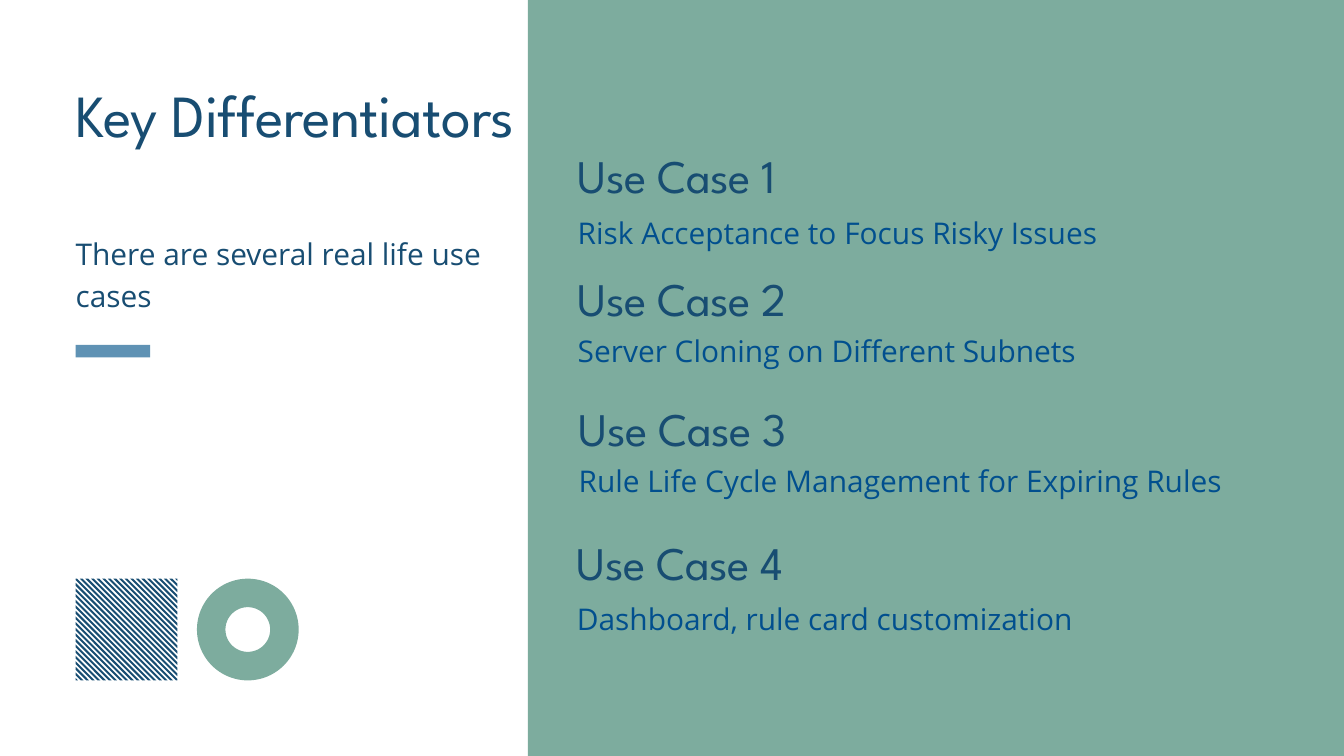
from pptx import Presentation
from pptx.dml.color import RGBColor
from pptx.enum.shapes import MSO_SHAPE as Shape
from pptx.enum.text import MSO_ANCHOR as Anchor, MSO_AUTO_SIZE as AutoSize, PP_ALIGN as Align
from pptx.oxml.ns import qn
from pptx.util import Pt

NAVY = RGBColor(0x18, 0x4D, 0x72)
BLUE = RGBColor(0x01, 0x4F, 0x8E)
STEEL = RGBColor(0x5F, 0x92, 0xB4)
SAGE = RGBColor(0x7D, 0xAC, 0x9E)

HEADING_FONT = "League Spartan"
BODY_FONT = "Open Sans"

MARGIN = 81
MOTIF_TOP = 620
MOTIF_SIZE = 109
STRIPE_PITCH = 6
STRIPE_WIDTH = 3


def write_text(box, text, font, size, color, line_height, tracking=0):
    frame = box.text_frame
    frame.text = text
    frame.word_wrap = True
    frame.auto_size = AutoSize.NONE
    frame.vertical_anchor = Anchor.TOP
    frame.margin_left = frame.margin_right = frame.margin_top = frame.margin_bottom = 0
    para = frame.paragraphs[0]
    para.alignment = Align.LEFT
    para.line_spacing = Pt(line_height)
    para.space_before = Pt(0)
    span = para.runs[0]
    span.font.name = font
    span.font.size = Pt(size)
    span.font.color.rgb = color
    if tracking:
        span.font._element.set("spc", str(tracking))


def paint(shape, color):
    shape.shadow.inherit = False
    shape.fill.solid()
    shape.fill.fore_color.rgb = color
    shape.line.fill.background()


deck = Presentation()
deck.slide_width = Pt(1440)
deck.slide_height = Pt(810)
page = deck.slides.add_slide(deck.slide_layouts[1])
shapes = page.shapes

title = shapes.title
title.left, title.top, title.width, title.height = Pt(MARGIN), Pt(77), Pt(485), Pt(163)
write_text(title, "Key Differentiators", HEADING_FONT, 64, NAVY, 83.2, -60)

intro = page.placeholders[1]
intro.left, intro.top, intro.width, intro.height = Pt(MARGIN), Pt(245.5), Pt(485), Pt(88)
write_text(intro, "There are several real life use cases", BODY_FONT, 32, NAVY, 45.4)
properties = intro.text_frame.paragraphs[0]._p.get_or_add_pPr()
properties.set("marL", "0")
properties.set("indent", "0")
properties.append(properties.makeelement(qn("a:buNone"), {}))

stripes = []
count = MOTIF_SIZE // STRIPE_PITCH
for step in range(-count, count + 1):
    center = step * STRIPE_PITCH
    low = max(center - STRIPE_WIDTH / 2, -MOTIF_SIZE)
    high = min(center + STRIPE_WIDTH / 2, MOTIF_SIZE)
    starts = [(max(shift, 0), max(-shift, 0)) for shift in (low, high)]
    ends = [(MOTIF_SIZE - y, MOTIF_SIZE - x) for x, y in reversed(starts)]
    if step == 0:
        starts.insert(1, (0, 0))
        ends.insert(1, (MOTIF_SIZE, MOTIF_SIZE))
    stripes.append([(Pt(MARGIN + x), Pt(MOTIF_TOP + y)) for x, y in starts + ends])

builder = shapes.build_freeform(*stripes[0][0])
builder.add_line_segments(stripes[0][1:], close=True)
for stripe in stripes[1:]:
    builder.move_to(*stripe[0])
    builder.add_line_segments(stripe[1:], close=True)
paint(builder.convert_to_shape(), NAVY)

ring = shapes.add_shape(Shape.DONUT, Pt(211), Pt(MOTIF_TOP), Pt(MOTIF_SIZE), Pt(MOTIF_SIZE))
ring.adjustments[0] = 0.28
paint(ring, SAGE)

accent = shapes.add_shape(Shape.RECTANGLE, Pt(MARGIN), Pt(369.5), Pt(80), Pt(13.5))
paint(accent, STEEL)
panel = shapes.add_shape(Shape.RECTANGLE, Pt(565.5), Pt(0), Pt(874.5), Pt(810))
paint(panel, SAGE)

use_cases = [
    (619, 152.5, 222.5, "Risk Acceptance to Focus Risky Issues"),
    (619, 284.5, 349, "Server Cloning on Different Subnets"),
    (620, 423.5, 489, "Rule Life Cycle Management for Expiring Rules"),
    (618, 567.5, 636.5, "Dashboard, rule card customization"),
]
for number, (left, heading_top, detail_top, text) in enumerate(use_cases, 1):
    heading = shapes.add_textbox(Pt(left), Pt(heading_top), Pt(766), Pt(63))
    write_text(heading, f"Use Case {number}", HEADING_FONT, 50, NAVY, 65, -50)
    detail = shapes.add_textbox(Pt(left), Pt(detail_top), Pt(766), Pt(42.5))
    write_text(detail, text, BODY_FONT, 32, BLUE, 45.4)

deck.save("out.pptx")
